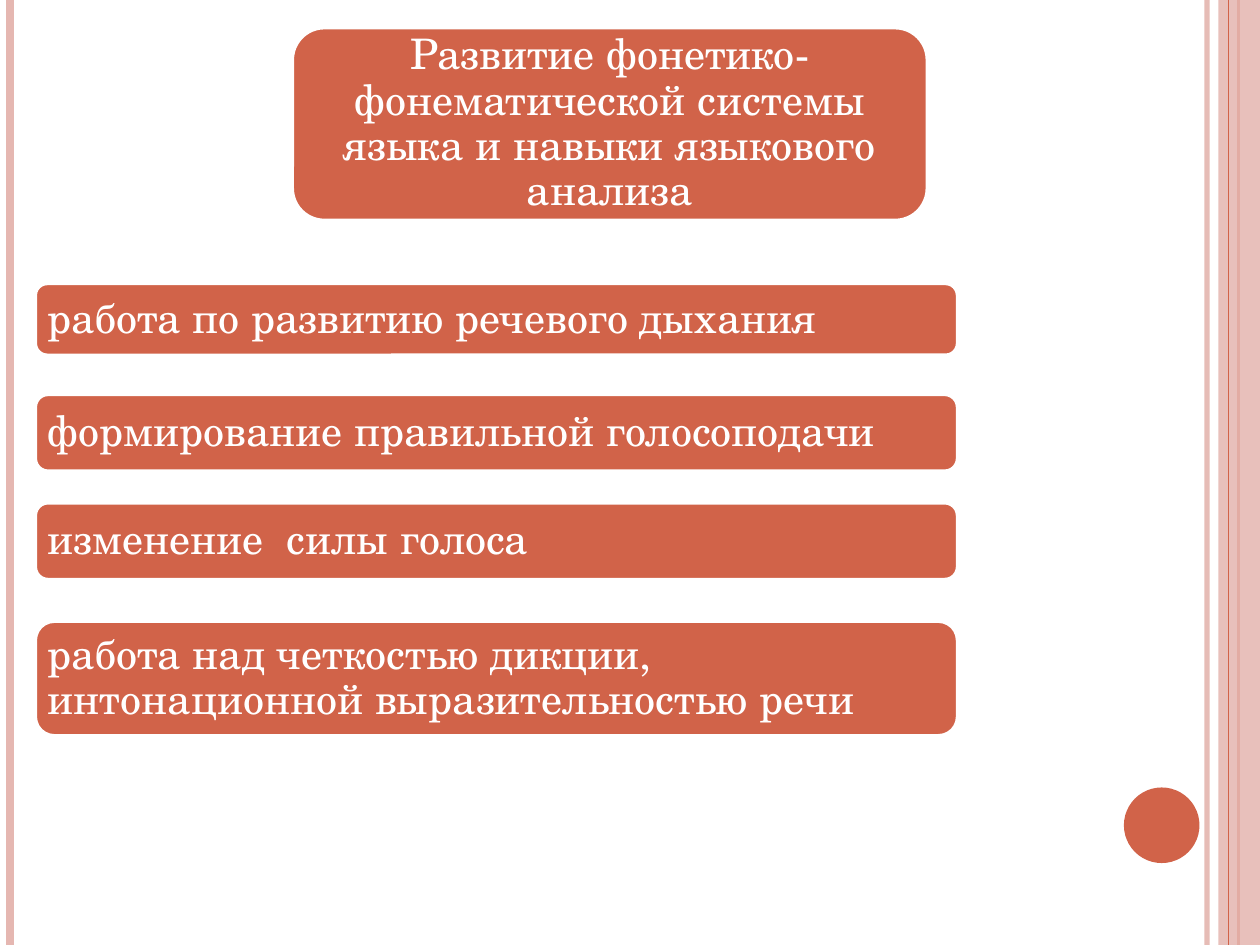
from dataclasses import dataclass

from lxml import etree
from pptx import Presentation
from pptx.dml.color import RGBColor
from pptx.enum import shapes, text
from pptx.oxml import ns
from pptx.util import Inches, Pt

RUST, PINK, WHITE = "D16349", "E5B7B1", "FFFFFF"
FONT = "TeX Gyre Schola"
WIDTH, HEIGHT = 10, 7.5


@dataclass
class Stripe:
    x: float
    weight: float
    color: str
    opacity: int = 100


@dataclass
class Card:
    left: float
    top: float
    width: float
    height: float
    label: str
    align: text.PP_ALIGN = text.PP_ALIGN.LEFT


def paint(fill, color: str, opacity: int = 100) -> None:
    fill.solid()
    fill.fore_color.rgb = RGBColor.from_string(color)
    if opacity < 100:
        tint = fill._xPr.find(".//" + ns.qn("a:srgbClr"))
        etree.SubElement(tint, ns.qn("a:alpha"), val=str(opacity * 1000))


def draw_stripe(slide, stripe: Stripe) -> None:
    x = Inches(stripe.x)
    rule = slide.shapes.add_connector(
        shapes.MSO_CONNECTOR.STRAIGHT, x, 0, x, Inches(HEIGHT))
    rule.line.width = Pt(stripe.weight)
    paint(rule.line.fill, stripe.color, stripe.opacity)
    etree.SubElement(rule._element.spPr, ns.qn("a:effectLst"))


def draw_shape(slide, kind, left: float, top: float, width: float,
               height: float, color: str, opacity: int = 100):
    shape = slide.shapes.add_shape(
        kind, Inches(left), Inches(top), Inches(width), Inches(height))
    shape.shadow.inherit = False
    paint(shape.fill, color, opacity)
    shape.line.fill.background()
    return shape


def draw_card(slide, card: Card) -> None:
    box = draw_shape(slide, shapes.MSO_SHAPE.ROUNDED_RECTANGLE, card.left,
                     card.top, card.width, card.height, RUST)
    paint(box.line.fill, WHITE)
    box.line.width = Pt(2)
    frame = box.text_frame
    frame.word_wrap = True
    frame.vertical_anchor = text.MSO_ANCHOR.MIDDLE
    corner_inset = 0.29 * card.height / 6
    inset = Inches(0.1 - corner_inset)
    frame.margin_left = frame.margin_right = inset
    frame.margin_top = frame.margin_bottom = inset
    frame.text = card.label
    line = frame.paragraphs[0]
    line.alignment = card.align
    line.line_spacing = 0.9
    for run in line.runs:
        run.font.name = FONT
        run.font.size = Pt(24)
        run.font.color.rgb = RGBColor.from_string(WHITE)


def main() -> None:
    deck = Presentation()
    deck.slide_width, deck.slide_height = Inches(WIDTH), Inches(HEIGHT)
    slide = deck.slides.add_slide(deck.slide_layouts[6])

    for stripe in (Stripe(9.58, 3, PINK, 93), Stripe(0.08, 4.5, PINK),
                   Stripe(9.83, 1.5, RUST)):
        draw_stripe(slide, stripe)
    draw_shape(slide, shapes.MSO_SHAPE.RECTANGLE,
               9.67, 0, 0.33, HEIGHT, PINK, 87)
    draw_stripe(slide, Stripe(9.75, 0.75, RUST))
    draw_shape(slide, shapes.MSO_SHAPE.OVAL, 8.92, 6.25, 0.6, 0.6, RUST)

    draw_card(slide, Card(
        2.32, 0.22, 5.04, 1.53,
        "Развитие фонетико-фонематической системы языка "
        "и навыки языкового анализа", text.PP_ALIGN.CENTER))
    tasks = (
        (2.25, 0.57, "работа по развитию речевого дыхания"),
        (3.13, 0.61, "формирование правильной голосоподачи"),
        (3.99, 0.61, "изменение  силы голоса"),
        (4.93, 0.91, "работа над четкостью дикции, "
                     "интонационной выразительностью речи"),
    )
    for top, height, label in tasks:
        draw_card(slide, Card(0.28, top, 7.32, height, label))

    deck.save("out.pptx")


if __name__ == "__main__":
    main()
